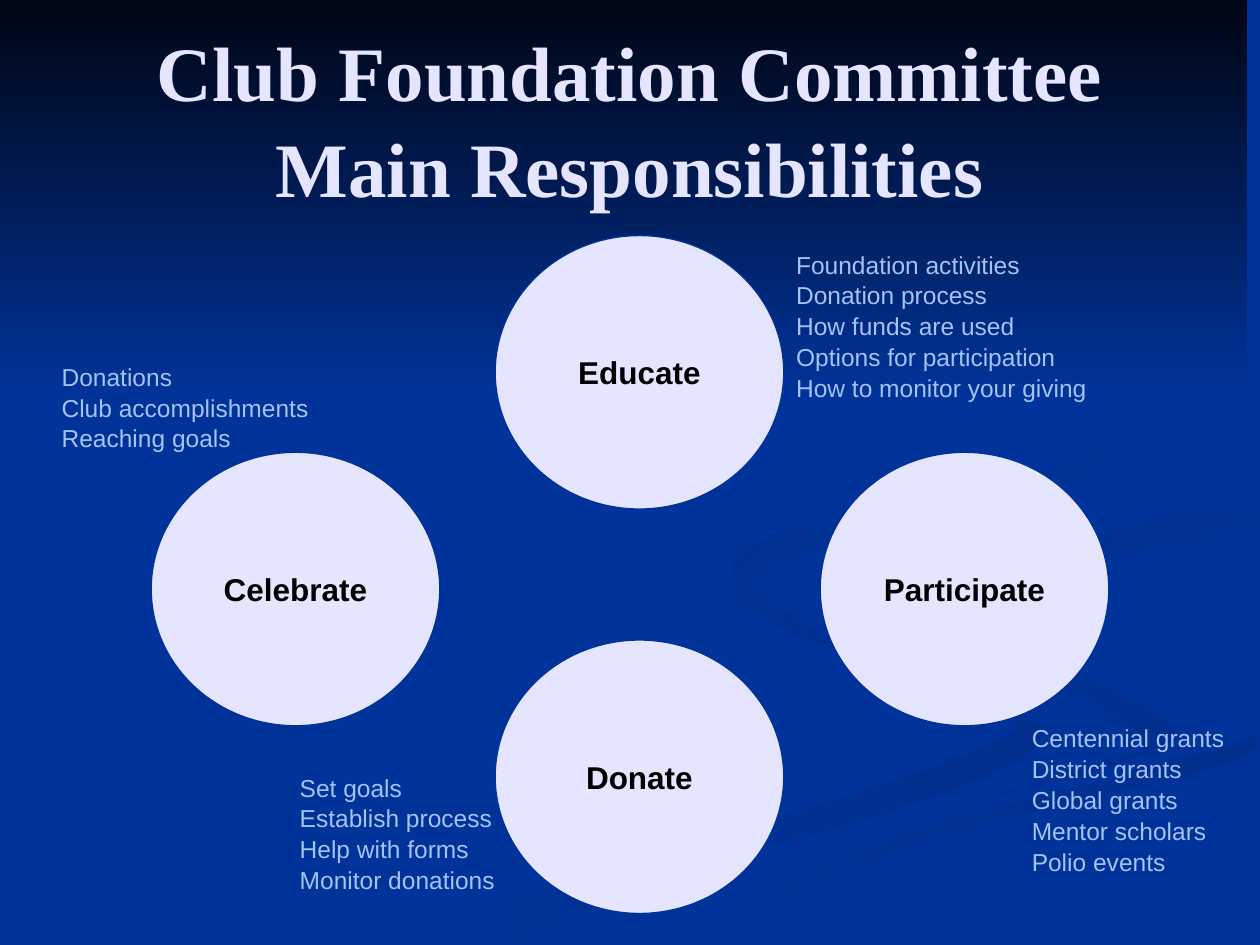
from dataclasses import dataclass

from pptx import Presentation
from pptx.dml.color import RGBColor
from pptx.enum.shapes import MSO_SHAPE
from pptx.enum.text import MSO_ANCHOR, PP_ALIGN
from pptx.util import Inches, Pt

OVAL = MSO_SHAPE.OVAL
CENTER, LEFT = PP_ALIGN.CENTER, PP_ALIGN.LEFT
MIDDLE, TOP = MSO_ANCHOR.MIDDLE, MSO_ANCHOR.TOP

COLORS = {
    "blue": "003399",
    "night": "000514",
    "shade": "002F8E",
    "lavender": "E5E5FF",
    "sky": "A4C2F4",
    "black": "000000",
}
CIRCLE_WIDTH, CIRCLE_HEIGHT = 2.29, 2.17
DETAIL_HEIGHT = 1.07
MARGIN = Inches(0.1)
CURVE_STEPS = 6

Point = tuple[float, float]


@dataclass
class Swoosh:
    start: str
    end: str
    angle: int
    points: list[Point]


@dataclass
class TextStyle:
    font: str
    size: float
    color: str
    bold: bool = False
    align: PP_ALIGN = LEFT
    anchor: MSO_ANCHOR = TOP
    spacing: float = 1.0


@dataclass
class Responsibility:
    name: str
    left: float
    top: float
    detail_left: float
    detail_top: float
    detail_width: float
    details: list[str]


TITLE_STYLE = TextStyle("Times New Roman", 44, "lavender", True, CENTER, MIDDLE, 1.04)
LABEL_STYLE = TextStyle("Arial", 18, "black", True, CENTER, MIDDLE)
DETAIL_STYLE = TextStyle("Arial", 14, "sky", spacing=1.05)

SWOOSHES = [
    Swoosh("blue", "shade", 0, [
        (8.01, 5.6), (6.76, 5.17), (5.86, 4.6), (6.24, 5.01), (7.45, 5.4),
        (8.05, 5.79), (6.67, 6.33), (4.65, 6.91), (3, 7.71), (3.64, 7.71),
        (5.07, 7.04), (7.16, 6.41), (8.2, 5.94)]),
    Swoosh("blue", "shade", 45, [
        (9.32, 5.82), (8.63, 5.37), (7.56, 5.01), (7.24, 4.64), (7.54, 5.1),
        (8.48, 5.47), (9.09, 5.94), (8.86, 6.2)]),
    Swoosh("shade", "blue", 90, [
        (5.03, 7.37), (5.68, 7.37), (7.39, 6.65), (9.72, 6.07), (9.72, 5.81),
        (7.81, 6.33), (6.23, 6.85)]),
    Swoosh("blue", "blue", 0, [
        (7.24, 4.64), (7.74, 5.04), (8.88, 5.35), (9.41, 5.76), (8.68, 6.12),
        (6.62, 6.69), (4.77, 7.51), (5.19, 7.49), (6.95, 6.7), (9.03, 6.11),
        (9.98, 5.82), (9.98, 5.39), (8.47, 5.04), (7.82, 4.6), (8.49, 4.27),
        (9.98, 4.02), (9.98, 3.87), (8.5, 4.11), (7.54, 4.32)]),
    Swoosh("shade", "blue", 45, [
        (7.81, 4.66), (8.24, 5.06), (8.04, 4.8), (8.56, 4.47), (9.9, 4.22),
        (9.9, 4.02), (8.62, 4.26)]),
    Swoosh("shade", "blue", 45, [
        (6.82, 4.26), (8.38, 3.92), (8.89, 3.42), (8.39, 2.74), (7.6, 2.33),
        (8.58, 2.91), (8.78, 3.51), (7.31, 4), (5.97, 4.32), (5.84, 4.73),
        (6.21, 4.93), (5.94, 4.59)]),
]
SKY = Swoosh("night", "blue", 90, [(0, 0), (0, 3.12), (9.9, 3.12), (9.9, 0)])

RESPONSIBILITIES = [
    Responsibility("Educate", 3.93, 1.87, 6.22, 1.87, 2.76, [
        "Foundation activities", "Donation process", "How funds are used",
        "Options for participation", "How to monitor your giving"]),
    Responsibility("Participate", 6.51, 3.59, 8.09, 5.63, 1.91, [
        "Centennial grants", "District grants", "Global grants",
        "Mentor scholars", "Polio events"]),
    Responsibility("Donate", 3.93, 5.08, 2.28, 6.02, 1.91, [
        "Set goals", "Establish process", "Help with forms", "Monitor donations"]),
    Responsibility("Celebrate", 1.2, 3.59, 0.39, 2.76, 2.29, [
        "Donations", "Club accomplishments", "Reaching goals"]),
]


def color(name: str) -> RGBColor:
    return RGBColor.from_string(COLORS[name])


def spline(a: float, b: float, c: float, d: float, t: float) -> float:
    return b + t / 2 * (c - a + t * (2 * a - 5 * b + 4 * c - d
                                     + t * (3 * (b - c) + d - a)))


def smooth(points: list[Point]) -> list[Point]:
    count = len(points)
    curve = []
    for index in range(count):
        near = [points[(index + offset) % count] for offset in (-1, 0, 1, 2)]
        xs, ys = zip(*near)
        for step in range(CURVE_STEPS):
            t = step / CURVE_STEPS
            curve.append((spline(*xs, t), spline(*ys, t)))
    return curve


def draw_outline(shapes, swoosh: Swoosh, points: list[Point]) -> None:
    corners = [(Inches(x), Inches(y)) for x, y in points]
    builder = shapes.build_freeform(*corners[0])
    builder.add_line_segments(corners[1:], close=True)
    outline = builder.convert_to_shape()
    outline.shadow.inherit = False
    outline.line.fill.background()
    outline.fill.gradient()
    outline.fill.gradient_angle = (360 - swoosh.angle) % 360
    for stop, name in zip(outline.fill.gradient_stops, (swoosh.start, swoosh.end)):
        stop.color.rgb = color(name)


def write(frame, lines: list[str], style: TextStyle) -> None:
    frame.word_wrap = True
    frame.vertical_anchor = style.anchor
    frame.margin_left = frame.margin_right = MARGIN
    frame.margin_top = frame.margin_bottom = MARGIN
    for index, line in enumerate(lines):
        paragraph = frame.add_paragraph() if index else frame.paragraphs[0]
        paragraph.alignment = style.align
        paragraph.line_spacing = style.spacing
        run = paragraph.add_run()
        run.text = line
        run.font.name = style.font
        run.font.size = Pt(style.size)
        run.font.bold = style.bold
        run.font.color.rgb = color(style.color)


def draw_text(shapes, left: float, top: float, width: float, height: float,
              lines: list[str], style: TextStyle) -> None:
    box = shapes.add_textbox(Inches(left), Inches(top), Inches(width), Inches(height))
    write(box.text_frame, lines, style)


def draw_circle(shapes, duty: Responsibility) -> None:
    circle = shapes.add_shape(OVAL, Inches(duty.left), Inches(duty.top),
                              Inches(CIRCLE_WIDTH), Inches(CIRCLE_HEIGHT))
    circle.shadow.inherit = False
    circle.fill.solid()
    circle.fill.fore_color.rgb = color("lavender")
    circle.line.color.rgb = color("blue")
    circle.line.width = Pt(0.75)
    write(circle.text_frame, [duty.name], LABEL_STYLE)


def main() -> None:
    deck = Presentation()
    deck.slide_width, deck.slide_height = Inches(10), Inches(7.5)
    slide = deck.slides.add_slide(deck.slide_layouts[6])
    slide.background.fill.solid()
    slide.background.fill.fore_color.rgb = color("blue")
    for swoosh in SWOOSHES:
        draw_outline(slide.shapes, swoosh, smooth(swoosh.points))
    draw_outline(slide.shapes, SKY, SKY.points)
    draw_text(slide.shapes, 0.5, 0.3, 9, 1.25,
              ["Club Foundation Committee Main Responsibilities"], TITLE_STYLE)
    for duty in RESPONSIBILITIES:
        draw_circle(slide.shapes, duty)
    for duty in RESPONSIBILITIES:
        draw_text(slide.shapes, duty.detail_left, duty.detail_top, duty.detail_width,
                  DETAIL_HEIGHT, duty.details, DETAIL_STYLE)
    deck.save("out.pptx")


if __name__ == "__main__":
    main()
